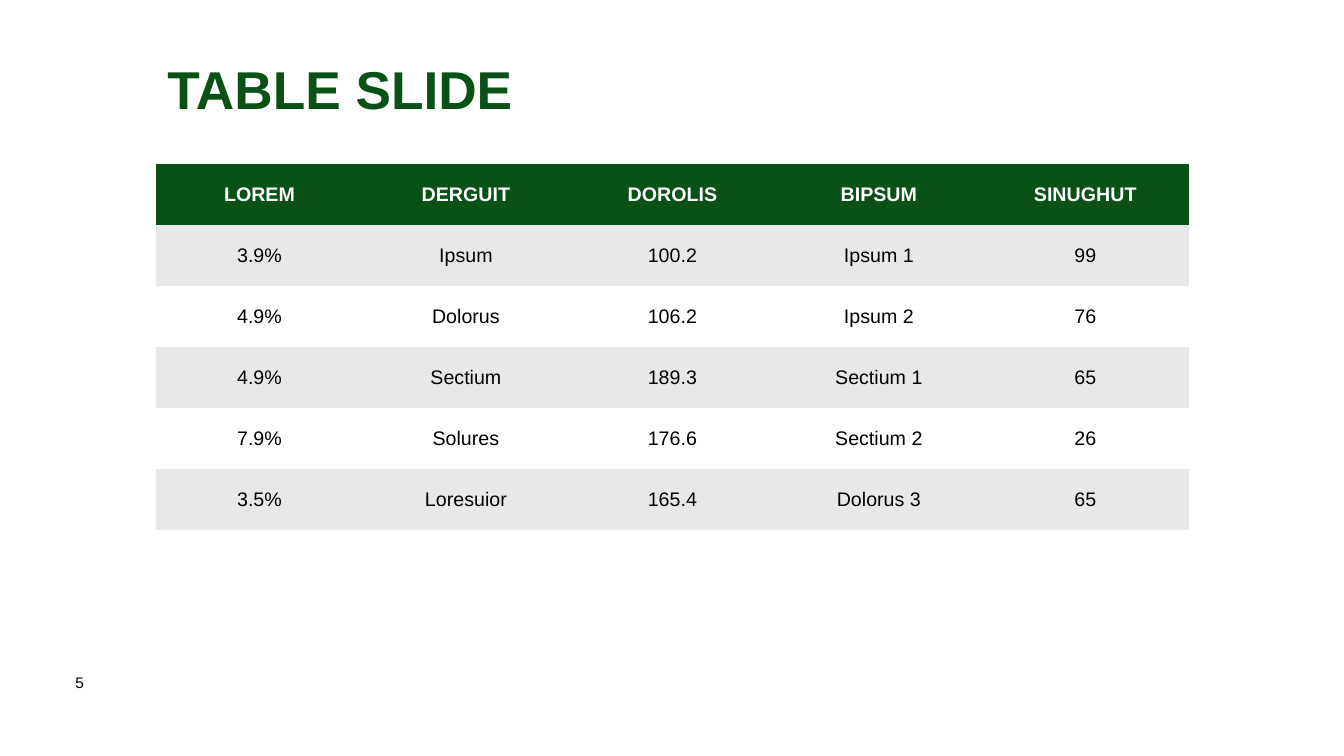
from dataclasses import dataclass

from lxml import etree
from pptx import Presentation
from pptx.dml.color import RGBColor
from pptx.enum import text
from pptx.oxml import ns
from pptx.util import Inches, Pt

TITLE = "TABLE SLIDE"
PAGE_NUMBER = "5"
ROWS = [
    ("LOREM", "DERGUIT", "DOROLIS", "BIPSUM", "SINUGHUT"),
    ("3.9%", "Ipsum", "100.2", "Ipsum 1", "99"),
    ("4.9%", "Dolorus", "106.2", "Ipsum 2", "76"),
    ("4.9%", "Sectium", "189.3", "Sectium 1", "65"),
    ("7.9%", "Solures", "176.6", "Sectium 2", "26"),
    ("3.5%", "Loresuior", "165.4", "Dolorus 3", "65"),
]
TITLE_AREA = (1.56, 0.46, 9.94, 0.67)
TABLE_AREA = (1.55, 1.63, 10.24, 3.63)
NUMBER_AREA = (0.65, 6.63, 0.58, 0.54)


@dataclass(frozen=True)
class Theme:
    font: str = "Arial"
    green: str = "095115"
    band: str = "E7E9E8"
    white: str = "FFFFFF"
    black: str = "000000"
    title_size: int = 38
    table_size: int = 14
    number_size: int = 11


THEME = Theme()


def write(frame, words, size, color, bold=False, align=text.PP_ALIGN.LEFT):
    para = frame.paragraphs[0]
    para.alignment = align
    span = para.add_run()
    span.text = words
    span.font.name = THEME.font
    span.font.size = Pt(size)
    span.font.bold = bold
    span.font.color.rgb = RGBColor.from_string(color)


def set_borders(cell, outlined):
    properties = cell._tc.get_or_add_tcPr()
    for side in "LRTB":
        line = etree.SubElement(properties, ns.qn(f"a:ln{side}"), w=str(Pt(1)))
        if side in outlined:
            fill = etree.SubElement(line, ns.qn("a:solidFill"))
            etree.SubElement(fill, ns.qn("a:srgbClr"), val=THEME.green)
        else:
            etree.SubElement(line, ns.qn("a:noFill"))


def add_title(page):
    title = page.shapes.title
    title.left, title.top, title.width, title.height = map(Inches, TITLE_AREA)
    frame = title.text_frame
    frame.auto_size = text.MSO_AUTO_SIZE.NONE
    frame.vertical_anchor = text.MSO_ANCHOR.TOP
    frame.margin_top = Inches(0.1)
    write(frame, TITLE, THEME.title_size, THEME.green, bold=True)


def add_data_table(page):
    left, top, width, height = map(Inches, TABLE_AREA)
    row_count, column_count = len(ROWS), len(ROWS[0])
    table = page.shapes.add_table(row_count, column_count, left, top, width, height).table
    for column in table.columns:
        column.width = width // column_count
    for row in table.rows:
        row.height = height // row_count
    for r, values in enumerate(ROWS):
        header = r == 0
        fill = THEME.green if header else THEME.band if r % 2 else THEME.white
        for c, value in enumerate(values):
            cell = table.cell(r, c)
            outlined = ""
            if header:
                outlined = "T" + "L" * (c == 0) + "R" * (c == column_count - 1)
            set_borders(cell, outlined)
            cell.fill.solid()
            cell.fill.fore_color.rgb = RGBColor.from_string(fill)
            cell.vertical_anchor = text.MSO_ANCHOR.MIDDLE
            cell.margin_left = cell.margin_right = Inches(0.1)
            cell.margin_top = cell.margin_bottom = Inches(0.04)
            color = THEME.white if header else THEME.black
            write(cell.text_frame, value, THEME.table_size, color, header, text.PP_ALIGN.CENTER)


def add_page_number(page):
    box = page.shapes.add_textbox(*map(Inches, NUMBER_AREA))
    box.text_frame.word_wrap = True
    write(box.text_frame, PAGE_NUMBER, THEME.number_size, THEME.black)


def main():
    deck = Presentation()
    deck.slide_width, deck.slide_height = Inches(13.33), Inches(7.5)
    page = deck.slides.add_slide(deck.slide_layouts[5])
    add_page_number(page)
    add_data_table(page)
    add_title(page)
    deck.save("out.pptx")


if __name__ == "__main__":
    main()
